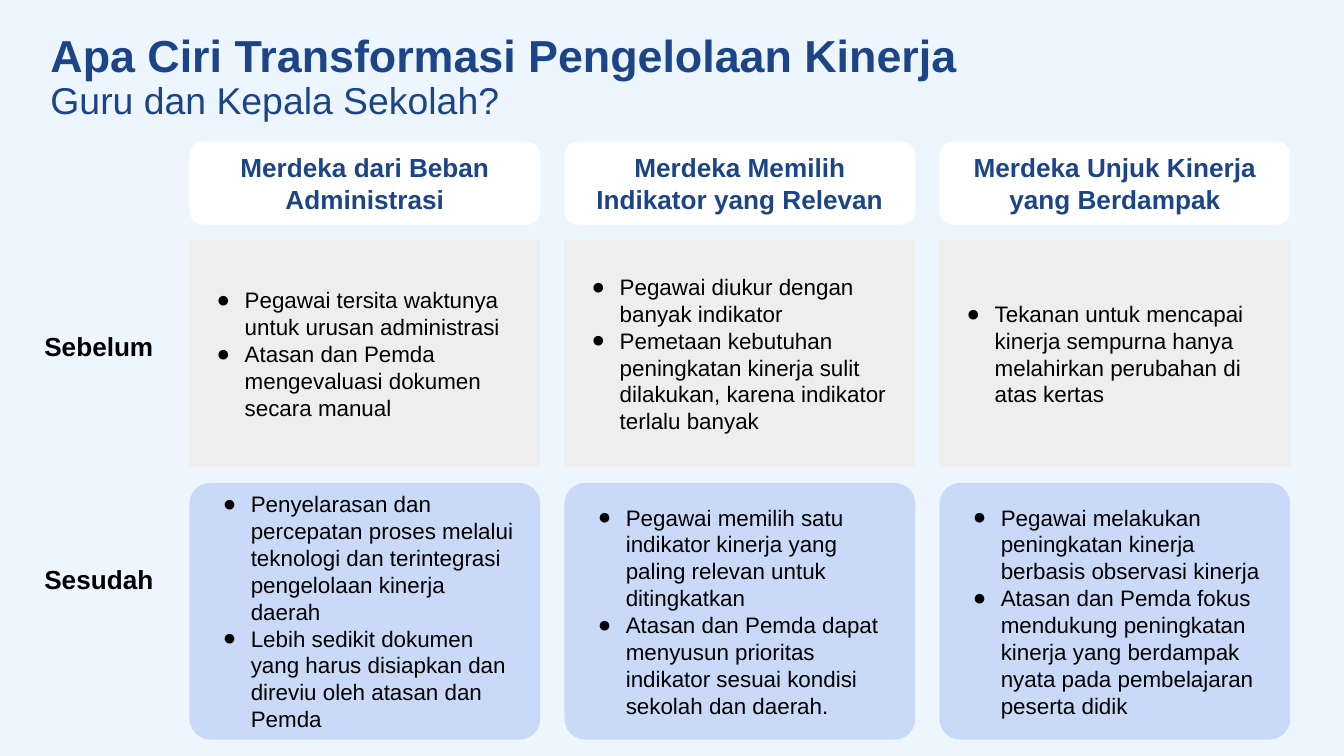
from pptx import Presentation
from pptx.dml.color import RGBColor
from pptx.enum.shapes import MSO_SHAPE as SHAPE
from pptx.enum.text import MSO_ANCHOR as ANCHOR, MSO_AUTO_SIZE as AUTO, PP_ALIGN as ALIGN
from pptx.oxml.ns import qn
from pptx.util import Pt
from lxml import etree

NAVY, BLACK = "1C4587", "000000"
COLUMN_W, COLUMN_STEP, GRID_X = 187.9, 200.9, 101.5

COLUMNS = [
    ("Merdeka dari Beban Administrasi",
     ["Pegawai tersita waktunya untuk urusan administrasi",
      "Atasan dan Pemda mengevaluasi dokumen secara manual"],
     ["Penyelarasan dan percepatan proses melalui teknologi dan terintegrasi "
      "pengelolaan kinerja daerah",
      "Lebih sedikit dokumen yang harus disiapkan dan direviu oleh atasan dan Pemda"]),
    ("Merdeka Memilih Indikator yang Relevan",
     ["Pegawai diukur dengan banyak indikator",
      "Pemetaan kebutuhan peningkatan kinerja sulit dilakukan, "
      "karena indikator terlalu banyak"],
     ["Pegawai memilih satu indikator kinerja yang paling relevan untuk ditingkatkan",
      "Atasan dan Pemda dapat menyusun prioritas indikator sesuai kondisi "
      "sekolah dan daerah."]),
    ("Merdeka Unjuk Kinerja yang Berdampak",
     ["Tekanan untuk mencapai kinerja sempurna hanya melahirkan perubahan di atas kertas"],
     ["Pegawai melakukan peningkatan kinerja berbasis observasi kinerja",
      "Atasan dan Pemda fokus mendukung peningkatan kinerja yang berdampak nyata "
      "pada pembelajaran peserta didik"]),
]


def rgb(value):
    return RGBColor.from_string(value)


def set_frame(tf, inset_x, inset_y, anchor):
    tf.word_wrap = True
    tf.margin_left = tf.margin_right = Pt(inset_x)
    tf.margin_top = tf.margin_bottom = Pt(inset_y)
    tf.vertical_anchor = anchor


def add_paragraph(tf, index, text, size, color, bold=False, align=ALIGN.LEFT):
    p = tf.add_paragraph() if index else tf.paragraphs[0]
    p.alignment = align
    r = p.add_run()
    r.text = text
    r.font.name, r.font.size, r.font.bold = "Arial", Pt(size), bold
    r.font.color.rgb = rgb(color)
    return p


def add_bullet(p):
    pPr = p._p.get_or_add_pPr()
    pPr.set("marL", str(Pt(22.5)))
    pPr.set("indent", str(-Pt(15)))
    color = etree.SubElement(pPr, qn("a:buClr"))
    etree.SubElement(color, qn("a:srgbClr"), val=BLACK)
    etree.SubElement(pPr, qn("a:buFont"), typeface="Arial")
    etree.SubElement(pPr, qn("a:buChar"), char="●")


def add_panel(s, box, fill, inset_y=7.2, radius=None):
    kind = SHAPE.RECTANGLE if radius is None else SHAPE.ROUNDED_RECTANGLE
    sp = s.shapes.add_shape(kind, *map(Pt, box))
    if radius is not None:
        sp.adjustments[0] = radius
    sp.shadow.inherit = False
    sp.fill.solid()
    sp.fill.fore_color.rgb = rgb(fill)
    sp.line.fill.background()
    set_frame(sp.text_frame, 7.2, inset_y, ANCHOR.MIDDLE)
    return sp.text_frame


def add_bullet_panel(s, box, items, **style):
    tf = add_panel(s, box, **style)
    for i, text in enumerate(items):
        add_bullet(add_paragraph(tf, i, text, 12, BLACK))


def add_column(s, x, heading, before, after):
    tf = add_panel(s, (x, 75.8, COLUMN_W, 44.6), "FFFFFF", radius=0.167)
    add_paragraph(tf, 0, heading, 14, NAVY, True, ALIGN.CENTER)
    add_bullet_panel(s, (x, 128.7, COLUMN_W, 121.6), before, fill="EEEEEE")
    add_bullet_panel(s, (x, 258.7, COLUMN_W, 137.5), after,
                     fill="C9DAF8", inset_y=0, radius=0.081)


def add_row_label(s, box, text):
    tf = s.shapes.add_textbox(*map(Pt, box)).text_frame
    set_frame(tf, 7.2, 7.2, ANCHOR.TOP)
    tf.auto_size = AUTO.SHAPE_TO_FIT_TEXT
    add_paragraph(tf, 0, text, 14, BLACK, True, ALIGN.CENTER)


def add_title(s, box):
    tf = s.shapes.add_textbox(*map(Pt, box)).text_frame
    set_frame(tf, 5.4, 2.7, ANCHOR.MIDDLE)
    lines = [("Apa Ciri Transformasi Pengelolaan Kinerja", 24, True),
             ("Guru dan Kepala Sekolah?", 20, False)]
    for i, (text, size, bold) in enumerate(lines):
        add_paragraph(tf, i, text, size, NAVY, bold).line_spacing = 0.9


def main():
    prs = Presentation()
    prs.slide_width, prs.slide_height = Pt(720), Pt(405)
    s = prs.slides.add_slide(prs.slide_layouts[6])
    s.background.fill.solid()
    s.background.fill.fore_color.rgb = rgb("EDF6FF")
    for i, column in enumerate(COLUMNS):
        add_column(s, GRID_X + i * COLUMN_STEP, *column)
    for y, text in ((170, "Sebelum"), (294.6, "Sesudah")):
        add_row_label(s, (3.4, y, 99.2, 31.6), text)
    add_title(s, (21.6, 4.3, 656.6, 74.9))
    prs.save("out.pptx")


if __name__ == "__main__":
    main()
